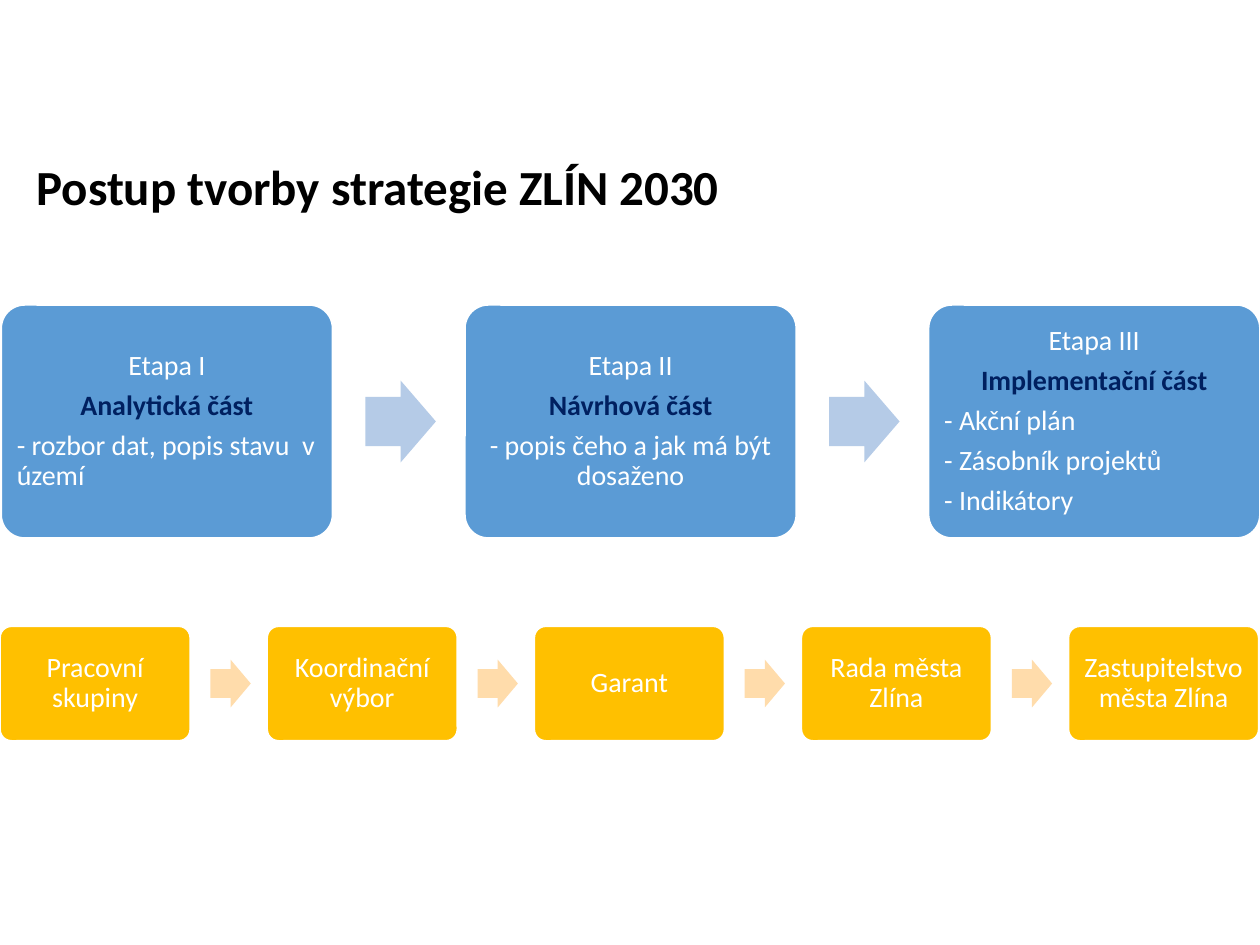
import pptx
import pptx.util
import pptx.dml.color
import pptx.enum.shapes
import pptx.enum.text

Inches = pptx.util.Inches
Pt = pptx.util.Pt
Shape = pptx.enum.shapes.MSO_SHAPE
Align = pptx.enum.text.PP_ALIGN

COLORS = {
    "stage": "5B9BD5",
    "stage_arrow": "B5CBE7",
    "body": "FFC000",
    "body_arrow": "FFDCAB",
    "heading": "002060",
    "white": "FFFFFF",
    "black": "000000",
}

STAGES = [
    ("Etapa I", "Analytická část", ["- rozbor dat, popis stavu  v území"], Align.LEFT),
    ("Etapa II", "Návrhová část", ["- popis čeho a jak má být dosaženo"], Align.CENTER),
    ("Etapa III", "Implementační část",
     ["- Akční plán", "- Zásobník projektů", "- Indikátory"], Align.LEFT),
]
BODIES = ["Pracovní skupiny", "Koordinační výbor", "Garant",
          "Rada města Zlína", "Zastupitelstvo města Zlína"]


class SlideBuilder:
    font_name = "Calibri"

    def __init__(self, slide):
        self.slide = slide

    def color(self, name):
        return pptx.dml.color.RGBColor.from_string(COLORS[name])

    def frame(self, shape, horizontal, vertical):
        text_frame = shape.text_frame
        text_frame.word_wrap = True
        text_frame.vertical_anchor = pptx.enum.text.MSO_ANCHOR.MIDDLE
        text_frame.margin_left = text_frame.margin_right = Inches(horizontal)
        text_frame.margin_top = text_frame.margin_bottom = Inches(vertical)
        return text_frame

    def format(self, paragraph, size, color, bold=False, align=Align.CENTER, after=0):
        paragraph.alignment = align
        paragraph.line_spacing = 0.9
        paragraph.space_after = Pt(after)
        for run in paragraph.runs:
            run.font.name = self.font_name
            run.font.size = Pt(size)
            run.font.bold = bold
            run.font.color.rgb = self.color(color)

    def title(self, text, left, top, width, height):
        shape = self.slide.shapes.add_textbox(
            Inches(left), Inches(top), Inches(width), Inches(height))
        text_frame = self.frame(shape, 0.07, 0.04)
        text_frame.text = text
        self.format(text_frame.paragraphs[0], 28, "black", True, Align.LEFT)

    def shape(self, kind, left, top, width, height, fill):
        shape = self.slide.shapes.add_shape(
            kind, Inches(left), Inches(top), Inches(width), Inches(height))
        shape.shadow.inherit = False
        shape.fill.solid()
        shape.fill.fore_color.rgb = self.color(fill)
        return shape

    def box(self, left, top, width, height, fill, lines):
        shape = self.shape(Shape.ROUNDED_RECTANGLE, left, top, width, height, fill)
        shape.adjustments[0] = 0.1
        shape.line.color.rgb = self.color("white")
        shape.line.width = Pt(1)
        text_frame = self.frame(shape, 0.07, 0.07)
        text_frame.text = "\n".join(text for text, *style in lines)
        for paragraph, (text, color, bold, align) in zip(text_frame.paragraphs, lines):
            self.format(paragraph, 16, color, bold, align, 5.6)

    def arrow(self, left, top, width, height, fill):
        shape = self.shape(Shape.RIGHT_ARROW, left, top, width, height, fill)
        shape.adjustments[0] = 0.6
        shape.adjustments[1] = 0.5
        shape.line.fill.background()

    def process(self, steps, left, top, width, height, pitch,
                arrow_offset, arrow_width, arrow_height, fill):
        arrow_top = top + (height - arrow_height) / 2
        for index, lines in enumerate(steps):
            step_left = left + index * pitch
            self.box(step_left, top, width, height, fill, lines)
            if index < len(steps) - 1:
                self.arrow(step_left + arrow_offset, arrow_top,
                           arrow_width, arrow_height, fill + "_arrow")


def main():
    presentation = pptx.Presentation()
    presentation.slide_width = Inches(10)
    presentation.slide_height = Inches(7.5)
    slide = presentation.slides.add_slide(presentation.slide_layouts[6])
    builder = SlideBuilder(slide)

    stage_steps = [
        [(name, "white", False, Align.CENTER), (heading, "heading", True, Align.CENTER)]
        + [(detail, "white", False, align) for detail in details]
        for name, heading, details, align in STAGES
    ]
    body_steps = [[(name, "white", False, Align.CENTER)] for name in BODIES]

    builder.process(stage_steps, 0.01, 2.42, 2.63, 1.85, 3.68, 2.89, 0.56, 0.65, "stage")
    builder.process(body_steps, 0, 4.97, 1.51, 0.91, 2.12, 1.67, 0.32, 0.38, "body")
    builder.title("Postup tvorby strategie ZLÍN 2030", 0.22, 1.2, 9.57, 0.61)
    presentation.save("out.pptx")


if __name__ == "__main__":
    main()
